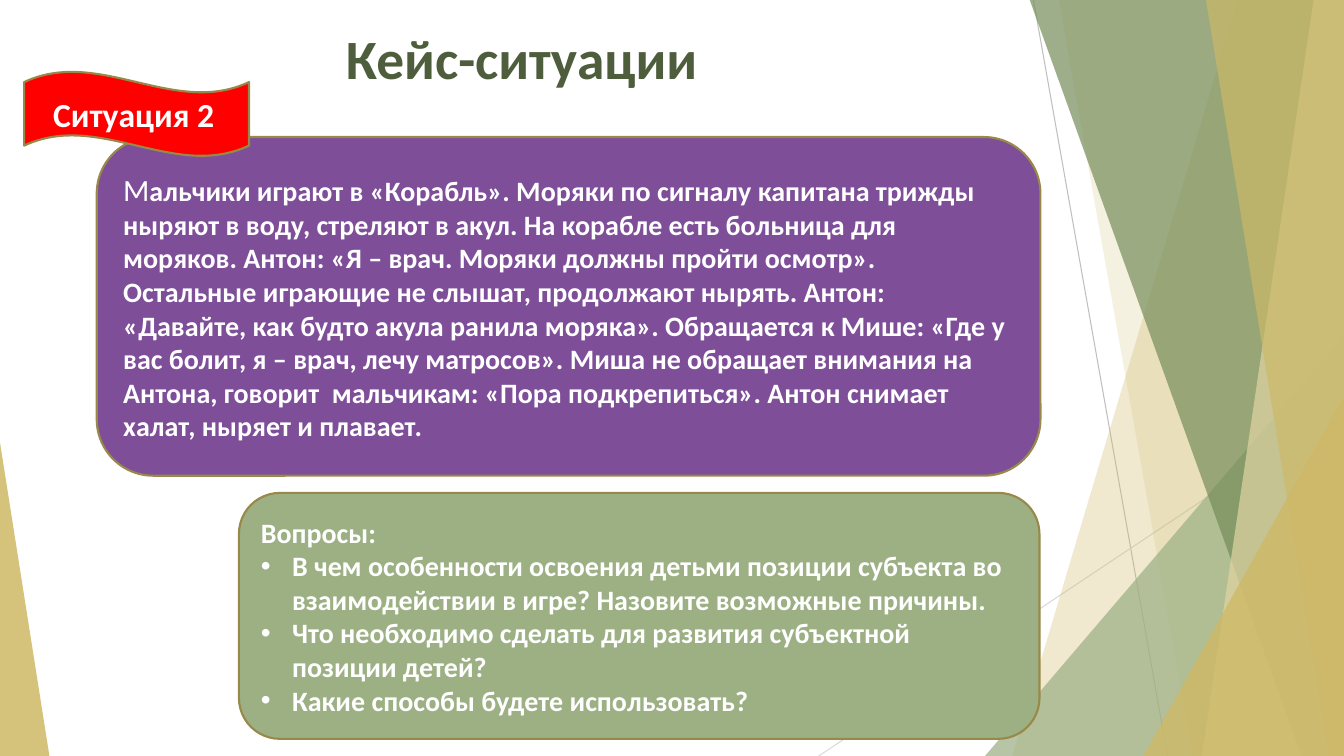
"""Build the "Кейс-ситуации" slide: a game situation and the questions about it."""
from lxml import etree
from pptx import Presentation
from pptx.dml.color import RGBColor
from pptx.enum.shapes import MSO_CONNECTOR, MSO_SHAPE
from pptx.enum.text import MSO_ANCHOR, PP_ALIGN
from pptx.oxml.ns import qn
from pptx.util import Pt

PX = 9144
WIDTH, HEIGHT = 1333, 750
BLEED_TOP = -1
BULLET_INDENT = 31
FONT = "Calibri"

STRAIGHT = MSO_CONNECTOR.STRAIGHT
TRIANGLE = MSO_SHAPE.ISOSCELES_TRIANGLE
ROUNDED = MSO_SHAPE.ROUNDED_RECTANGLE
WAVE = MSO_SHAPE.WAVE
LEFT, CENTER = PP_ALIGN.LEFT, PP_ALIGN.CENTER
TOP, MIDDLE = MSO_ANCHOR.TOP, MSO_ANCHOR.MIDDLE

WHITE = RGBColor(0xFF, 0xFF, 0xFF)
GOLD = RGBColor(0xCE, 0xB9, 0x66)
PALE_GOLD = RGBColor(0xE2, 0xD5, 0xA3)
SAGE = RGBColor(0x9C, 0xB0, 0x84)
MOSS = RGBColor(0x76, 0x8D, 0x5A)
DARK_MOSS = RGBColor(0x4E, 0x5D, 0x3C)
PURPLE = RGBColor(0x7E, 0x4E, 0x99)
RED = RGBColor(0xFF, 0x00, 0x00)
OUTLINE = RGBColor(0x98, 0x89, 0x4B)
GRAY = RGBColor(0xBF, 0xBF, 0xBF)
LIGHT_GRAY = RGBColor(0xD9, 0xD9, 0xD9)

# Each paragraph: (bulleted, [(text, size, bold), ...])
TITLE = [(False, [("Кейс-ситуации", 39.6, True)])]
LABEL = [(False, [("Ситуация 2", 24, True), (" ", 18, False)])]
SITUATION = [(False, [
    ("М", 22, False),
    ("альчики играют в «Корабль». Моряки по сигналу капитана трижды ныряют в воду, "
     "стреляют в акул. На корабле есть больница для моряков. Антон: «Я – врач. Моряки "
     "должны пройти осмотр». Остальные играющие не слышат, продолжают нырять. Антон: "
     "«Давайте, как будто акула ранила моряка». Обращается к Мише: «Где у вас болит, "
     "я – врач, лечу матросов». Миша не обращает внимания на Антона, говорит  мальчикам: "
     "«Пора подкрепиться». Антон снимает халат, ныряет и плавает.", 20, True),
])]
QUESTIONS = [
    (False, [("Вопросы:", 20, True)]),
    (True, [("В чем особенности освоения детьми позиции субъекта во взаимодействии "
             "в игре? Назовите возможные причины.", 20, True)]),
    (True, [("Что необходимо сделать для развития субъектной позиции детей?", 20, True)]),
    (True, [("Какие способы будете использовать?", 20, True)]),
]

RAYS = [
    ((1025, 0, 1158, HEIGHT), GRAY),
    ((WIDTH, 403, 812, HEIGHT), LIGHT_GRAY),
]
# Bands hold (top x, bottom x); triangles hold (left, top, width, apex)
FACETS = [
    ("band", (1228, 1004), GOLD, 30),
    ("band", (1050, 1183), GOLD, 20),
    ("triangle", (977, 333, 356, 1), SAGE, 72),
    ("band", (1021, 1291), MOSS, 70),
    ("band", (1303, 1192), PALE_GOLD, 70),
    ("band", (1196, 1318), GOLD, 65),
    ("triangle", (1134, 393, 199, 1), GOLD, 80),
    ("triangle", (0, 439, 49, 0), GOLD, 85),
]
PANELS = [
    (ROUNDED, (96, 136, 936, 336), PURPLE, SITUATION, LEFT),
    (WAVE, (24, 71, 223, 84), RED, LABEL, CENTER),
    (ROUNDED, (237, 489, 794, 244), SAGE, QUESTIONS, LEFT),
]
TITLE_BOX = (31, 19, 973, 89)


def emu(lengths):
    return [length * PX for length in lengths]


def add_ray(slide, ends, color):
    ray = slide.shapes.add_connector(STRAIGHT, *emu(ends))
    ray.line.color.rgb = color
    ray.line.width = Pt(0.75)
    etree.SubElement(ray._element.spPr, qn("a:effectLst"))


def add_facet(slide, kind, geometry, color, opacity):
    if kind == "band":
        top_x, bottom_x = geometry
        builder = slide.shapes.build_freeform(top_x, BLEED_TOP, scale=PX)
        builder.add_line_segments(
            [(WIDTH, BLEED_TOP), (WIDTH, HEIGHT), (bottom_x, HEIGHT)], close=True)
        facet = builder.convert_to_shape()
    else:
        left, top, width, apex = geometry
        facet = slide.shapes.add_shape(TRIANGLE, *emu((left, top, width, HEIGHT - top)))
        facet.adjustments[0] = apex
    facet.shadow.inherit = False
    facet.line.fill.background()
    facet.fill.solid()
    facet.fill.fore_color.rgb = color
    color_element = facet._element.spPr.find(qn("a:solidFill"))[0]
    etree.SubElement(color_element, qn("a:alpha"), val=str(opacity * 1000))


def add_bullet(paragraph):
    properties = paragraph._p.get_or_add_pPr()
    properties.set("marL", str(BULLET_INDENT * PX))
    properties.set("indent", str(-BULLET_INDENT * PX))
    etree.SubElement(properties, qn("a:buFont"), typeface="Arial")
    etree.SubElement(properties, qn("a:buChar"), char="•")


def write_text(shape, paragraphs, color, alignment, anchor):
    frame = shape.text_frame
    frame.word_wrap = True
    frame.vertical_anchor = anchor
    for index, (bulleted, runs) in enumerate(paragraphs):
        paragraph = frame.add_paragraph() if index else frame.paragraphs[0]
        paragraph.alignment = alignment
        if bulleted:
            add_bullet(paragraph)
        for text, size, bold in runs:
            run = paragraph.add_run()
            run.text = text
            run.font.name = FONT
            run.font.size = Pt(size)
            run.font.bold = bold
            run.font.color.rgb = color


def add_panel(slide, preset, box, fill, paragraphs, alignment):
    panel = slide.shapes.add_shape(preset, *emu(box))
    panel.shadow.inherit = False
    panel.fill.solid()
    panel.fill.fore_color.rgb = fill
    panel.line.color.rgb = OUTLINE
    panel.line.width = Pt(1.5)
    write_text(panel, paragraphs, WHITE, alignment, MIDDLE)


def main():
    presentation = Presentation()
    presentation.slide_width, presentation.slide_height = emu((WIDTH, HEIGHT))
    slide = presentation.slides.add_slide(presentation.slide_layouts[6])
    for ray in RAYS:
        add_ray(slide, *ray)
    for facet in FACETS:
        add_facet(slide, *facet)
    title = slide.shapes.add_textbox(*emu(TITLE_BOX))
    write_text(title, TITLE, DARK_MOSS, CENTER, TOP)
    for panel in PANELS:
        add_panel(slide, *panel)
    presentation.save("out.pptx")


if __name__ == "__main__":
    main()
